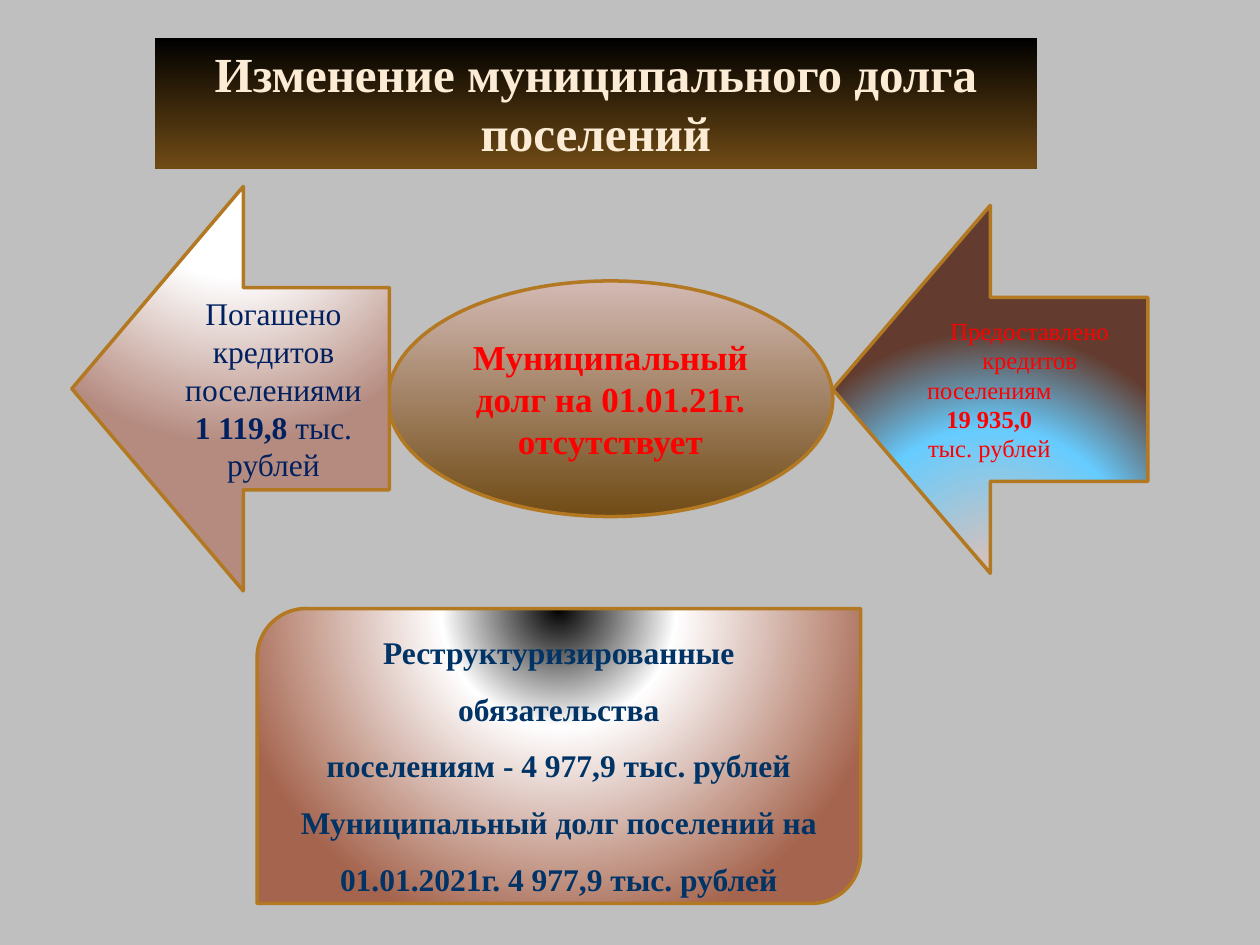
"""Build the slide on the change in the municipal debt of settlements."""
from lxml import etree
from pptx import Presentation
from pptx.dml.color import RGBColor
from pptx.enum.shapes import MSO_SHAPE
from pptx.enum.text import MSO_ANCHOR, PP_ALIGN
from pptx.oxml.ns import qn
from pptx.util import Inches, Pt

OVAL = MSO_SHAPE.OVAL
ARROW = MSO_SHAPE.LEFT_ARROW
RECT = MSO_SHAPE.RECTANGLE
ROUND = MSO_SHAPE.ROUND_2_DIAG_RECTANGLE
TOP, MIDDLE = MSO_ANCHOR.TOP, MSO_ANCHOR.MIDDLE
CENTER = PP_ALIGN.CENTER

GREY = RGBColor(0xBF, 0xBF, 0xBF)
BLACK = RGBColor(0x00, 0x00, 0x00)
WHITE = RGBColor(0xFF, 0xFF, 0xFF)
GOLD = RGBColor(0xB2, 0x78, 0x22)
BROWN = RGBColor(0x70, 0x4B, 0x15)
ROSE = RGBColor(0xD3, 0xB9, 0xB3)
DUST = RGBColor(0xB5, 0x8B, 0x80)
SAND = RGBColor(0xDD, 0xC0, 0xB6)
SKY = RGBColor(0x66, 0xCC, 0xFF)
UMBER = RGBColor(0x63, 0x3C, 0x2F)
CLAY = RGBColor(0xA5, 0x64, 0x4E)
CREAM = RGBColor(0xFC, 0xEC, 0xD5)
RED = RGBColor(0xFF, 0x00, 0x00)
NAVY = RGBColor(0x00, 0x20, 0x60)
BLUE = RGBColor(0x00, 0x33, 0x66)

ABOVE = dict(l=50, t=-80, r=50, b=180)
BELOW = dict(l=50, t=130, r=50, b=-30)


def shade(shape, stops, focus):
    """Fill a shape downwards, or in circles round a focus."""
    shape.fill.gradient()
    shape.fill.gradient_angle = 270
    grad = shape._element.spPr.find(qn("a:gradFill"))
    row = grad.find(qn("a:gsLst"))
    for old in list(row):
        row.remove(old)
    for pos, color in stops:
        stop = etree.SubElement(row, qn("a:gs"), pos=str(pos * 1000))
        etree.SubElement(stop, qn("a:srgbClr"), val=str(color))
    if focus:
        grad.remove(grad.find(qn("a:lin")))
        ring = etree.SubElement(grad, qn("a:path"), path="circle")
        sides = {side: str(share * 1000) for side, share in focus.items()}
        etree.SubElement(ring, qn("a:fillToRect"), **sides)


deck = Presentation()
deck.slide_width, deck.slide_height = Inches(10), Inches(7.5)
slide = deck.slides.add_slide(deck.slide_layouts[6])
slide.background.fill.solid()
slide.background.fill.fore_color.rgb = GREY

parts = [
    dict(kind=OVAL, at=(3.08, 2.23, 3.53, 1.87), adj=(), focus=None,
         stops=[(0, ROSE), (100, BROWN)], size=20, color=RED, gap=1,
         text=[[("Муниципальный долг на 01.01.21г.", True)],
               [("отсутствует", True)]]),
    dict(kind=ARROW, at=(0.57, 1.48, 2.52, 3.21), adj=(0.5, 0.54),
         focus=ABOVE, stops=[(0, WHITE), (35, WHITE), (100, DUST)],
         size=18, color=NAVY, gap=1,
         text=[[("Погашено кредитов поселениями", False)],
               [("1 119,8 ", True), ("тыс. рублей", False)]]),
    dict(kind=RECT, at=(1.23, 0.3, 7, 1.04), adj=(), focus=None,
         stops=[(0, BLACK), (100, BROWN)], size=28, color=CREAM, gap=1,
         text=[[("Изменение муниципального долга поселений", True)]]),
    dict(kind=ARROW, at=(6.61, 1.63, 2.5, 2.92), adj=(0.5, 0.5),
         focus=BELOW, stops=[(0, SAND), (60, SKY), (100, UMBER)],
         size=14, color=RED, gap=1,
         text=[[("Предоставлено кредитов", False)],
               [("поселениям", False)],
               [("19 935,0 ", True), ("тыс. рублей", False)]]),
    dict(kind=ROUND, at=(2.04, 4.83, 4.79, 2.34), adj=(), focus=ABOVE,
         stops=[(0, BLACK), (35, WHITE), (100, CLAY)],
         size=18, color=BLUE, gap=1.5,
         text=[[("Реструктуризированные обязательства", True)],
               [("поселениям - 4 977,9 тыс. рублей", True)],
               [("Муниципальный долг поселений на 01.01.2021г. "
                 "4 977,9 тыс. рублей", True)]]),
]

for part in parts:
    shape = slide.shapes.add_shape(part["kind"], *map(Inches, part["at"]))
    shape.shadow.inherit = False
    for i, share in enumerate(part["adj"]):
        shape.adjustments[i] = share
    shade(shape, part["stops"], part["focus"])
    title = part["kind"] == RECT
    if title:
        shape.line.fill.background()
    else:
        shape.line.color.rgb = GOLD
        shape.line.width = Pt(2)
    frame = shape.text_frame
    frame.word_wrap = True
    frame.vertical_anchor = TOP if title else MIDDLE
    for i, runs in enumerate(part["text"]):
        para = frame.add_paragraph() if i else frame.paragraphs[0]
        para.alignment = CENTER
        para.line_spacing = part["gap"]
        if runs[0][0] == "поселениям":
            para._p.get_or_add_pPr().set("marR", str(Inches(0.64)))
        for words, bold in runs:
            run = para.add_run()
            run.text = words
            look = dict(name="Times New Roman", size=Pt(part["size"]), bold=bold)
            for key, value in look.items():
                setattr(run.font, key, value)
            run.font.color.rgb = part["color"]

deck.save("out.pptx")
